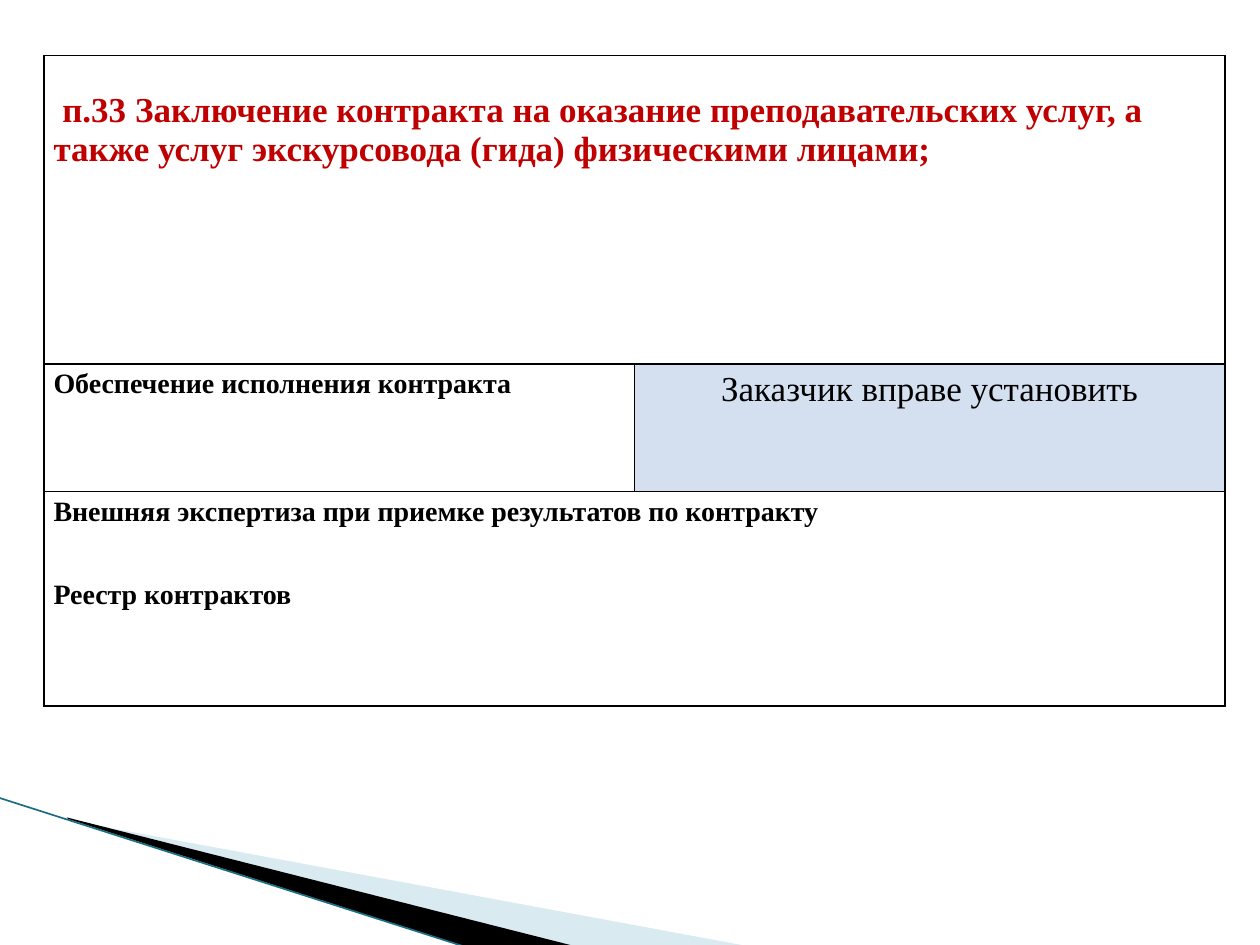
from lxml.etree import SubElement
from pptx import Presentation
from pptx.dml.color import RGBColor
from pptx.enum.shapes import MSO_CONNECTOR as CONN
from pptx.enum.text import PP_ALIGN as AL
from pptx.oxml import parse_xml
from pptx.oxml.ns import nsdecls, qn
from pptx.util import Cm, Pt

BLACK = RGBColor(0x00, 0x00, 0x00)
RED = RGBColor(0xC0, 0x00, 0x00)
CELL_BLUE = RGBColor(0xD4, 0xDF, 0xEF)
PALE_BLUE = RGBColor(0xA0, 0xCB, 0xDC)
TEAL = RGBColor(0x1A, 0x6E, 0x82)
FONT = "Times New Roman"


def write(p, text, size=16, bold=True, color=BLACK, align=AL.LEFT,
          spacing=1.15, before=0, indent=0):
    """Fill a paragraph with one formatted run."""
    p.alignment, p.line_spacing, p.space_before = align, spacing, Pt(before)
    if indent:
        p._p.get_or_add_pPr().set("indent", str(Pt(indent)))
    r = p.add_run()
    r.text = text
    r.font.name, r.font.size, r.font.bold = FONT, Pt(size), bold
    r.font.color.rgb = color


class Deck:
    def __init__(self, width, height):
        self.prs = Presentation()
        self.prs.slide_width, self.prs.slide_height = Cm(width), Cm(height)
        self.s = self.prs.slides.add_slide(self.prs.slide_layouts[6])

    def wedge(self, points, color, alpha=None):
        (x, y), *rest = [(Cm(a), Cm(b)) for a, b in points]
        builder = self.s.shapes.build_freeform(x, y)
        builder.add_line_segments(rest)
        sp = builder.convert_to_shape()
        sp.shadow.inherit = False
        sp.fill.solid()
        sp.fill.fore_color.rgb = color
        sp.line.fill.background()
        if alpha:
            clr = sp._element.spPr.find(".//" + qn("a:srgbClr"))
            SubElement(clr, qn("a:alpha"), val=str(alpha * 1000))

    def line(self, x1, y1, x2, y2, color, width):
        sp = self.s.shapes.add_connector(CONN.STRAIGHT, Cm(x1), Cm(y1), Cm(x2), Cm(y2))
        sp.line.color.rgb, sp.line.width = color, Pt(width)
        SubElement(sp._element.spPr, qn("a:effectLst"))

    def table(self, x, y, cols, rows):
        frame = self.s.shapes.add_table(len(rows), len(cols), Cm(x), Cm(y),
                                        Cm(sum(cols)), Cm(sum(rows)))
        table = frame.table
        table.first_row = table.horz_banding = False
        for col, width in zip(table.columns, cols):
            col.width = Cm(width)
        for row, height in zip(table.rows, rows):
            row.height = Cm(height)
        for cell in table.iter_cells():
            cell.margin_left = cell.margin_right = Cm(0.19)
            cell.margin_top = cell.margin_bottom = 0
            cell.fill.background()
            self.borders(cell)
        return table

    def borders(self, cell):
        tc_pr = cell._tc.get_or_add_tcPr()
        for i, side in enumerate("LRTB"):
            tc_pr.insert(i, parse_xml(
                f'<a:ln{side} {nsdecls("a")} w="{Pt(1)}"><a:solidFill>'
                f'<a:srgbClr val="{BLACK}"/></a:solidFill></a:ln{side}>'))


def main():
    deck = Deck(25.4, 19.05)

    # Corner decoration
    deck.wedge([(1.4, 16.54), (15.11, 19.08), (11.58, 19.08), (1.4, 16.51)], PALE_BLUE, 40)
    deck.wedge([(1.35, 16.48), (11.61, 19.08), (9.45, 19.1), (1.37, 16.51)], BLACK)
    deck.line(-0.03, 16.08, 9.42, 19.1, TEAL, 0.95)

    # Contract table; first and last rows span both columns
    table = deck.table(0.89, 1.12, [11.9, 11.9], [6.22, 2.57, 4.32])
    for row in (0, 2):
        table.cell(row, 0).merge(table.cell(row, 1))

    heading = table.cell(0, 0)
    heading.margin_top = Cm(0.72)
    write(heading.text_frame.paragraphs[0],
          "п.33 Заключение контракта на оказание преподавательских услуг, "
          "а также услуг экскурсовода (гида) физическими лицами;",
          size=20, color=RED, spacing=1.0, indent=5)

    write(table.cell(1, 0).text_frame.paragraphs[0], "Обеспечение исполнения контракта")
    right = table.cell(1, 1)
    right.fill.solid()
    right.fill.fore_color.rgb = CELL_BLUE
    write(right.text_frame.paragraphs[0], "Заказчик вправе установить",
          size=20, bold=False, align=AL.CENTER)

    tf = table.cell(2, 0).text_frame
    write(tf.paragraphs[0], "Внешняя экспертиза при приемке результатов по контракту")
    write(tf.add_paragraph(), "Реестр контрактов", before=27)

    deck.prs.save("out.pptx")


if __name__ == "__main__":
    main()
